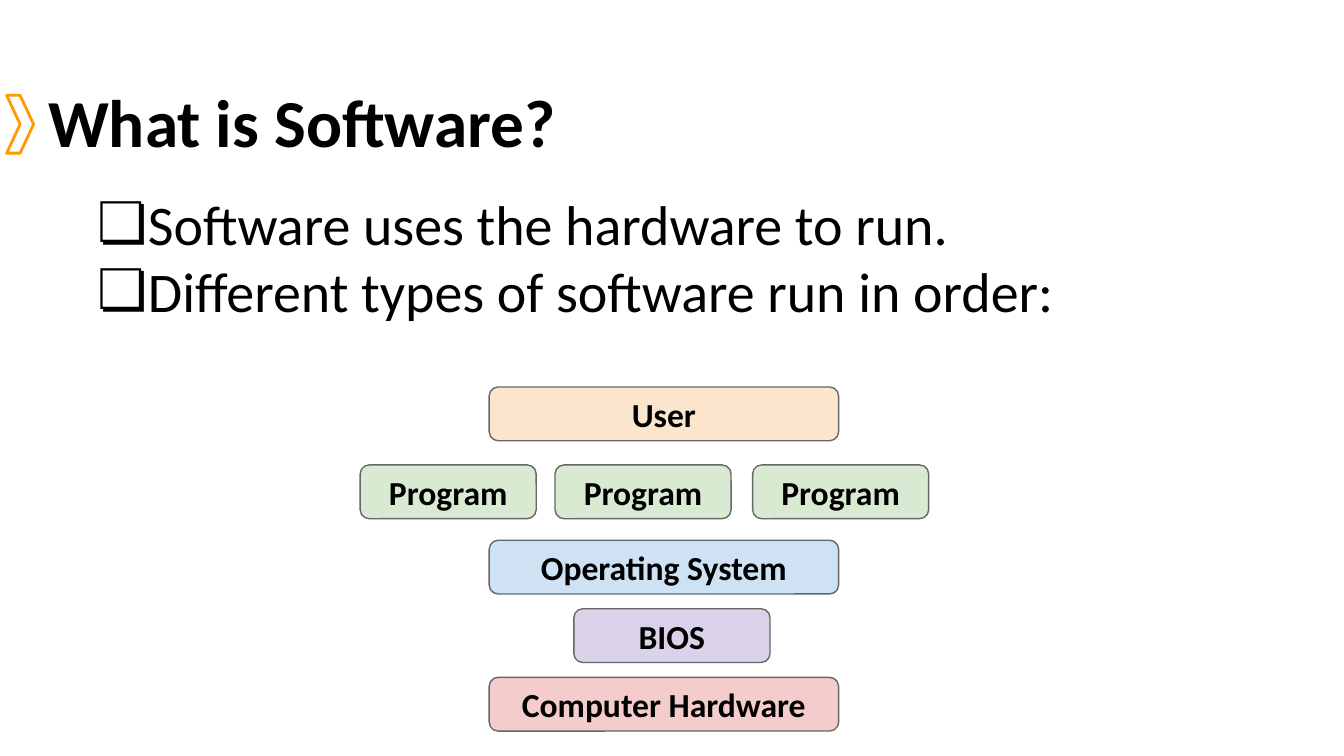
from dataclasses import dataclass

from lxml.etree import SubElement
from pptx import Presentation
from pptx.dml.color import RGBColor
from pptx.enum.shapes import MSO_SHAPE as Shape
from pptx.enum.text import MSO_ANCHOR as Anchor, PP_ALIGN as Align
from pptx.oxml.ns import qn
from pptx.util import Inches, Pt


@dataclass(frozen=True)
class Theme:
    font: str = "Calibri"
    text: str = "000000"
    accent: str = "FF9900"
    outline: str = "666666"
    user: str = "FCE5CD"
    program: str = "D9EAD3"
    system: str = "CFE2F3"
    bios: str = "D9D2E9"
    hardware: str = "F4CCCC"
    title_size: int = 36
    body_size: int = 30
    label_size: int = 18


theme = Theme()


def write(shape, lines, size, bold=False, anchor=Anchor.TOP, align=Align.LEFT):
    """Fill a shape with one paragraph per line and return its paragraphs."""
    frame = shape.text_frame
    frame.word_wrap = True
    frame.vertical_anchor = anchor
    frame.margin_left = frame.margin_right = Inches(0.1)
    frame.margin_top = frame.margin_bottom = Inches(0.1)
    frame.text = "\n".join(lines)
    for para in frame.paragraphs:
        para.alignment = align
        for span in para.runs:
            span.font.name = theme.font
            span.font.size = Pt(size)
            span.font.bold = bold
            span.font.color.rgb = RGBColor.from_string(theme.text)
    return frame.paragraphs


deck = Presentation()
deck.slide_width = Inches(10)
deck.slide_height = deck.slide_width * 9 // 16
page = deck.slides.add_slide(deck.slide_layouts[6])

# Title with its chevron marker
chevron = page.shapes.add_shape(
    Shape.CHEVRON, Inches(0.05), Inches(0.71), Inches(0.2), Inches(0.43))
chevron.shadow.inherit = False
chevron.fill.background()
chevron.line.color.rgb = RGBColor.from_string(theme.accent)
chevron.line.width = Pt(1.5)

title = page.shapes.add_textbox(Inches(0.26), Inches(0.36), Inches(9.74), Inches(0.94))
write(title, ["What is Software?"], theme.title_size, bold=True, anchor=Anchor.BOTTOM)

# Bulleted statements
body = page.shapes.add_textbox(Inches(0.38), Inches(1.31), Inches(9.12), Inches(4.07))
statements = [
    "Software uses the hardware to run.",
    "Different types of software run in order:",
]
for para in write(body, statements, theme.body_size):
    properties = para._p.get_or_add_pPr()
    properties.set("marL", str(Inches(0.5)))
    properties.set("indent", str(Inches(-0.25)))
    bullet_color = SubElement(properties, qn("a:buClr"))
    SubElement(bullet_color, qn("a:srgbClr"), val=theme.text)
    SubElement(properties, qn("a:buSzPts"), val=str(theme.body_size * 100))
    SubElement(properties, qn("a:buFont"), typeface=theme.font)
    SubElement(properties, qn("a:buChar"), char="❏")

# Software layers from the user down to the hardware: label, top, width, lefts, fill
layers = [
    ("User", 2.88, 2.6, [3.64], theme.user),
    ("Program", 3.46, 1.31, [2.68, 4.13, 5.6], theme.program),
    ("Operating System", 4.02, 2.6, [3.64], theme.system),
    ("BIOS", 4.53, 1.46, [4.27], theme.bios),
    ("Computer Hardware", 5.04, 2.6, [3.64], theme.hardware),
]
for label, top, width, lefts, fill in layers:
    for left in lefts:
        box = page.shapes.add_shape(
            Shape.ROUNDED_RECTANGLE, Inches(left), Inches(top), Inches(width), Inches(0.4))
        box.shadow.inherit = False
        box.fill.solid()
        box.fill.fore_color.rgb = RGBColor.from_string(fill)
        box.line.color.rgb = RGBColor.from_string(theme.outline)
        box.line.width = Pt(0.75)
        write(box, [label], theme.label_size, bold=True,
              anchor=Anchor.MIDDLE, align=Align.CENTER)

deck.save("out.pptx")
